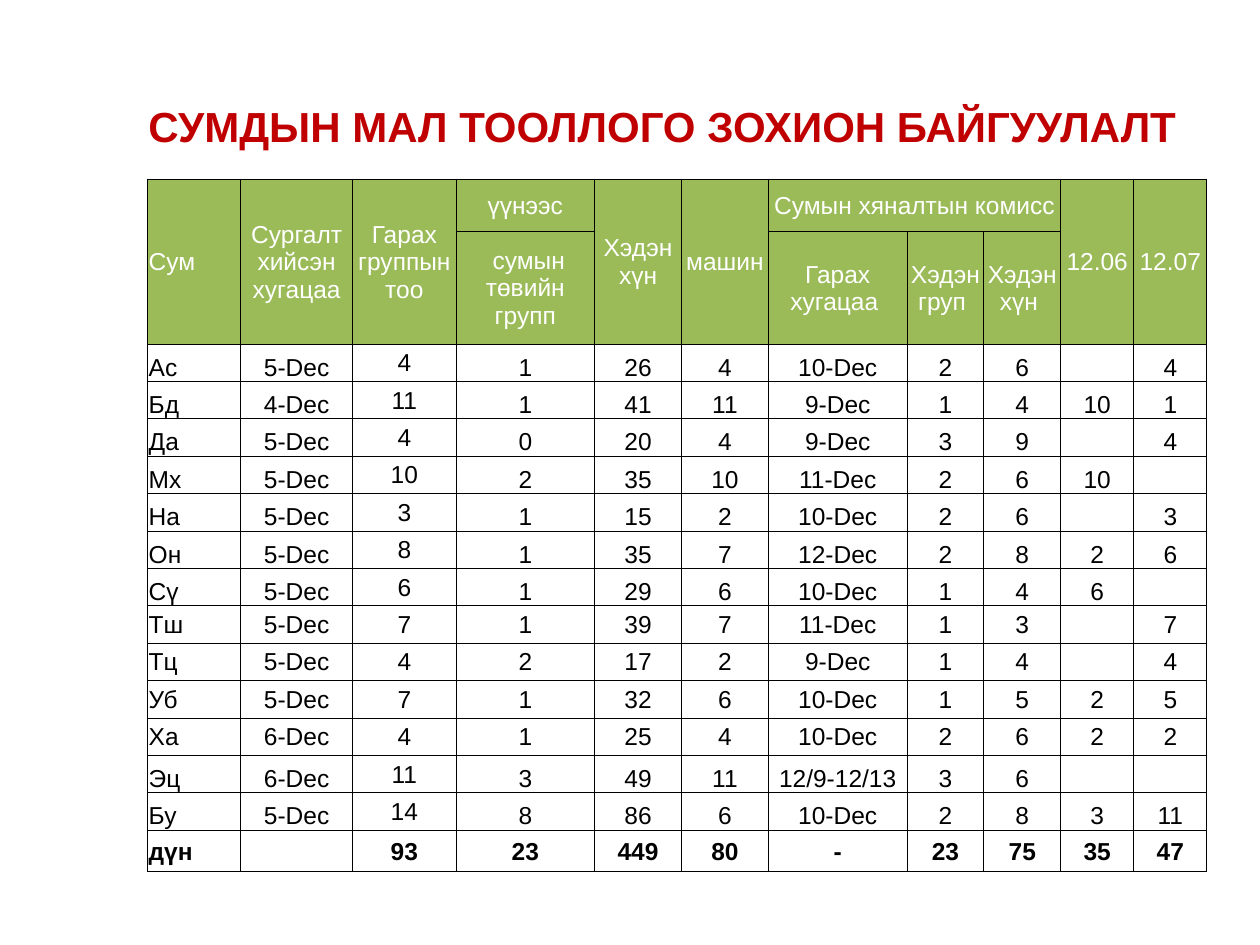
from lxml.etree import SubElement
from pptx import Presentation
from pptx.dml.color import RGBColor
from pptx.enum.text import MSO_ANCHOR, PP_ALIGN
from pptx.oxml import parse_xml
from pptx.oxml.ns import nsdecls
from pptx.util import Inches, Pt

GREEN = RGBColor(0x9B, 0xBB, 0x59)
RED = RGBColor(0xC0, 0x00, 0x00)
WHITE = RGBColor(0xFF, 0xFF, 0xFF)
BLACK = RGBColor(0x00, 0x00, 0x00)

TITLE = "СУМДЫН МАЛ ТООЛЛОГО ЗОХИОН БАЙГУУЛАЛТ"
WIDTHS = [0.74, 0.89, 0.82, 1.1, 0.69, 0.69, 1.1, 0.61, 0.61, 0.58, 0.58]
HEIGHT, TOP_ROW, SUB_ROW, SUM_ROW = 5.5, 0.42, 0.89, 0.33
GROUP_COL = 2

HEADS = [
    ["Сум", "Сургалт хийсэн хугацаа", "Гарах группын тоо", "үүнээс",
     "Хэдэн хүн", "машин", "Сумын хяналтын комисс", "", "", "12.06", "12.07"],
    ["", "", "", " сумын төвийн групп", "", "", "Гарах хугацаа ",
     "Хэдэн груп ", "Хэдэн хүн ", "", ""],
]
BODY = """
Ас|5-Dec|4|1|26|4|10-Dec|2|6||4
Бд|4-Dec|11|1|41|11|9-Dec|1|4|10|1
Да|5-Dec|4|0|20|4|9-Dec|3|9||4
Мх|5-Dec|10|2|35|10|11-Dec|2|6|10|
На|5-Dec|3|1|15|2|10-Dec|2|6||3
Он|5-Dec|8|1|35|7|12-Dec|2|8|2|6
Сү|5-Dec|6|1|29|6|10-Dec|1|4|6|
Тш|5-Dec|7|1|39|7|11-Dec|1|3||7
Тц|5-Dec|4|2|17|2|9-Dec|1|4||4
Уб|5-Dec|7|1|32|6|10-Dec|1|5|2|5
Ха|6-Dec|4|1|25|4|10-Dec|2|6|2|2
Эц|6-Dec|11|3|49|11|12/9-12/13|3|6||
Бу|5-Dec|14|8|86|6|10-Dec|2|8|3|11
дүн||93|23|449|80|-|23|75|35|47
"""
ROWS = HEADS + [line.split("|") for line in BODY.strip().splitlines()]
LAST = len(ROWS) - 1
MIDDLE_ROWS = {0, 1, LAST} | {
    i for i, row in enumerate(ROWS) if row[0] in ("Тш", "Тц", "Уб", "Ха")}


def apply(item, values):
    for name, value in values.items():
        setattr(item, name, value)


def style(para, size, color, bold, align):
    apply(para.font, {"name": "Arial", "size": Pt(size), "bold": bold})
    para.font.color.rgb = color
    para.alignment = align


def add_title(slide):
    box = slide.shapes.add_textbox(
        Inches(1.08), Inches(0.75), Inches(8.5), Inches(0.5))
    frame = box.text_frame
    apply(frame, {"word_wrap": True, "text": TITLE})
    style(frame.paragraphs[0], 24, RED, True, PP_ALIGN.JUSTIFY)


def add_border(cell):
    props = cell._tc.get_or_add_tcPr()
    for i, side in enumerate("LRTB"):
        line = parse_xml(f'<a:ln{side} {nsdecls("a")} w="{Pt(0.5)}"/>')
        fill = SubElement(line, line.tag.replace(f"ln{side}", "solidFill"))
        tint = SubElement(fill, line.tag.replace(f"ln{side}", "srgbClr"))
        tint.set("val", str(BLACK))
        props.insert(i, line)


def fill_cell(cell, text, row, col):
    head = row < len(HEADS)
    middle = row in MIDDLE_ROWS or (col == GROUP_COL and not head)
    inset = Inches(0.01)
    apply(cell, {
        "text": text,
        "margin_left": inset, "margin_right": inset,
        "margin_top": inset, "margin_bottom": 0,
        "vertical_anchor": MSO_ANCHOR.MIDDLE if middle else MSO_ANCHOR.BOTTOM,
    })
    style(cell.text_frame.paragraphs[0], 14, WHITE if head else BLACK,
          row == LAST, PP_ALIGN.CENTER if col else PP_ALIGN.LEFT)
    if head:
        cell.fill.solid()
        cell.fill.fore_color.rgb = GREEN
    else:
        cell.fill.background()
    add_border(cell)


def merge_heads(table):
    for col in (0, 1, 2, 4, 5, 9, 10):
        table.cell(0, col).merge(table.cell(1, col))
    table.cell(0, 6).merge(table.cell(0, 8))


def add_grid(slide):
    frame = slide.shapes.add_table(
        len(ROWS), len(WIDTHS), Inches(1.17), Inches(1.42),
        Inches(sum(WIDTHS)), Inches(HEIGHT))
    table = frame.table
    apply(table, {"first_row": False, "horz_banding": False})
    for col, width in zip(table.columns, WIDTHS):
        col.width = Inches(width)
    count = len(ROWS) - 3
    each = (HEIGHT - TOP_ROW - SUB_ROW - SUM_ROW) / count
    heights = [TOP_ROW, SUB_ROW] + [each] * count + [SUM_ROW]
    for row, height in zip(table.rows, heights):
        row.height = Inches(height)
    for r, texts in enumerate(ROWS):
        for c, text in enumerate(texts):
            fill_cell(table.cell(r, c), text, r, c)
    merge_heads(table)


def main():
    deck = Presentation()
    apply(deck, {"slide_width": Inches(10), "slide_height": Inches(7.5)})
    slide = deck.slides.add_slide(deck.slide_layouts[6])
    add_grid(slide)
    add_title(slide)
    deck.save("out.pptx")


if __name__ == "__main__":
    main()
